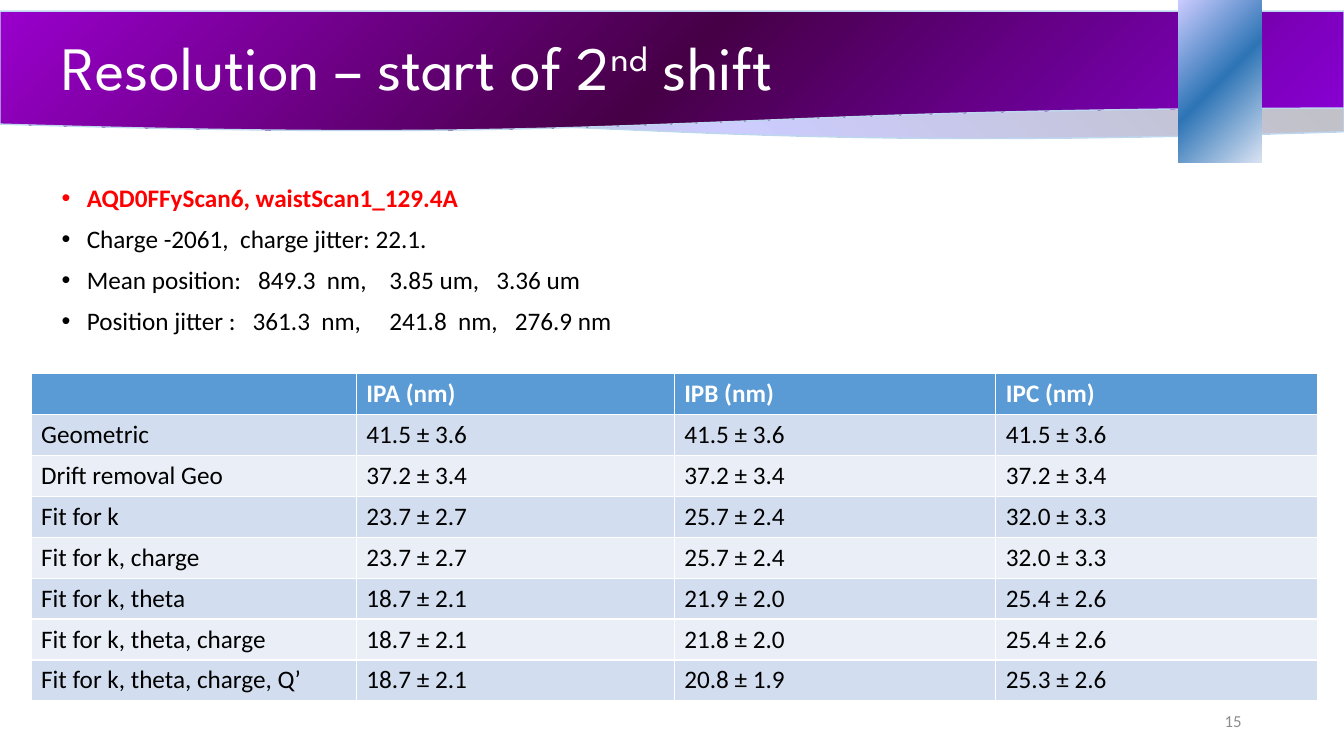
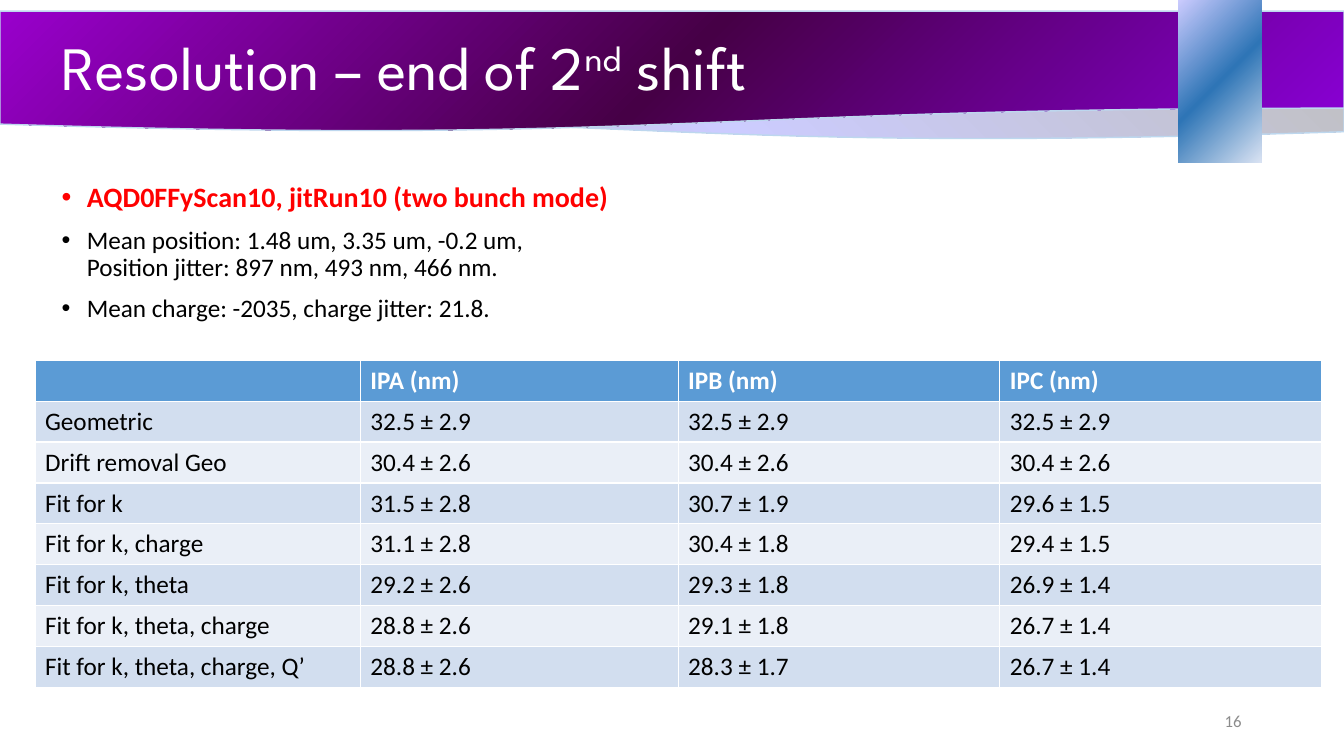
from lxml import etree
from pptx import Presentation
from pptx import util as u
from pptx.dml import color
from pptx.enum import shapes, text
from pptx.oxml import ns

WHITE = color.RGBColor(0xFF, 0xFF, 0xFF)
BLACK = color.RGBColor(0x00, 0x00, 0x00)
RED = color.RGBColor(0xFF, 0x00, 0x00)
GREY = color.RGBColor(0x8C, 0x8C, 0x8C)
PALE_BLUE = color.RGBColor(0xBD, 0xD7, 0xEE)
HEADER_BLUE = color.RGBColor(0x5B, 0x9B, 0xD5)
ROW_DARK = color.RGBColor(0xD2, 0xDE, 0xEF)
ROW_LIGHT = color.RGBColor(0xEA, 0xEF, 0xF7)
MID_GREY = color.RGBColor(0xA6, 0xA6, 0xA6)
LIGHT_GREY = color.RGBColor(0xBF, 0xBF, 0xBF)
LAVENDER = color.RGBColor(0xCC, 0xCC, 0xFF)
VIOLET = color.RGBColor(0x8A, 0x00, 0xD6)
PLUM = color.RGBColor(0x46, 0x00, 0x46)
MAGENTA = color.RGBColor(0x99, 0x00, 0xCC)
ICE = color.RGBColor(0xDA, 0xE3, 0xF3)
BLUE = color.RGBColor(0x2E, 0x75, 0xB6)

TITLE_FONT = {"name": "League Spartan", "size": u.Pt(44), "color": WHITE}
BODY_FONT = {"name": "Calibri", "size": u.Pt(18), "color": BLACK, "bold": False}
HEADER_FONT = {**BODY_FONT, "color": WHITE, "bold": True}
NUMBER_FONT = {"name": "Calibri", "size": u.Pt(12), "color": GREY}
BULLET_FORMAT = {"line_spacing": 0.9, "space_before": u.Pt(10)}

COLUMN_WIDTHS = (232.4, 227, 229.8, 229.8)
ROW_HEIGHT = 29.2
HEADERS = ("", "IPA (nm)", "IPB (nm)", "IPC (nm)")
METHODS = (
    "Geometric",
    "Drift removal Geo",
    "Fit for k",
    "Fit for k, charge",
    "Fit for k, theta",
    "Fit for k, theta, charge",
    "Fit for k, theta, charge, Q’",
)

SLIDES = (
    {
        "number": 15,
        "title": "Resolution – start of 2",
        "bullets": (
            "AQD0FFyScan6, waistScan1_129.4A",
            "Charge -2061,  charge jitter: 22.1.",
            "Mean position:   849.3  nm,    3.85 um,   3.36 um",
            "Position jitter :   361.3  nm,     241.8  nm,   276.9 nm",
        ),
        "lead_size": 18,
        "body_box": (36.8, 128.8, 828, 232),
        "columns": 1,
        "table_at": (22.2, 267),
        "values": (
            ("41.5 ± 3.6", "41.5 ± 3.6", "41.5 ± 3.6"),
            ("37.2 ± 3.4", "37.2 ± 3.4", "37.2 ± 3.4"),
            ("23.7 ± 2.7", "25.7 ± 2.4", "32.0 ± 3.3"),
            ("23.7 ± 2.7", "25.7 ± 2.4", "32.0 ± 3.3"),
            ("18.7 ± 2.1", "21.9 ± 2.0", "25.4 ± 2.6"),
            ("18.7 ± 2.1", "21.8 ± 2.0", "25.4 ± 2.6"),
            ("18.7 ± 2.1", "20.8 ± 1.9", "25.3 ± 2.6"),
        ),
    },
    {
        "number": 16,
        "title": "Resolution – end of 2",
        "bullets": (
            "AQD0FFyScan10, jitRun10 (two bunch mode)",
            "Mean position: 1.48 um, 3.35 um, -0.2 um,\vPosition jitter: 897 nm, 493 nm, 466 nm.",
            "Mean charge: -2035, charge jitter: 21.8.",
        ),
        "lead_size": 20,
        "body_box": (36.8, 127.4, 828, 342.8),
        "columns": 2,
        "table_at": (25, 257.4),
        "values": (
            ("32.5 ± 2.9", "32.5 ± 2.9", "32.5 ± 2.9"),
            ("30.4 ± 2.6", "30.4 ± 2.6", "30.4 ± 2.6"),
            ("31.5 ± 2.8", "30.7 ± 1.9", "29.6 ± 1.5"),
            ("31.1 ± 2.8", "30.4 ± 1.8", "29.4 ± 1.5"),
            ("29.2 ± 2.6", "29.3 ± 1.8", "26.9 ± 1.4"),
            ("28.8 ± 2.6", "29.1 ± 1.8", "26.7 ± 1.4"),
            ("28.8 ± 2.6", "28.3 ± 1.7", "26.7 ± 1.4"),
        ),
    },
)


def points(values):
    return [u.Pt(value) for value in values]


def format_object(target, values):
    for name, value in values.items():
        setattr(target, name, value)


def format_runs(paragraph, values):
    for run in paragraph.runs:
        for name, value in values.items():
            if name == "color":
                run.font.color.rgb = value
            else:
                setattr(run.font, name, value)


def place(shape, box):
    format_object(shape, dict(zip(("left", "top", "width", "height"), points(box))))


def add_child(parent, tag, **attributes):
    return etree.SubElement(parent, ns.qn(tag), attributes)


def set_gradient(shape, colors, circular):
    shape.fill.gradient()
    gradient = next(shape.element.iter(ns.qn("a:gradFill")))
    gradient.clear()
    gradient.set("rotWithShape", "1")
    stops = add_child(gradient, "a:gsLst")
    for position, stop_color in zip(("0", "50000", "100000"), colors):
        stop = add_child(stops, "a:gs", pos=position)
        add_child(stop, "a:srgbClr", val=str(stop_color))
    if circular:
        focus = add_child(gradient, "a:path", **{"path": "circle"})
        add_child(focus, "a:fillToRect", l="100000", t="100000")
    else:
        add_child(gradient, "a:lin", ang="13500000", scaled="0")


def add_band(slide, kind, box, colors, circular=False, flipped=False):
    band = slide.shapes.add_shape(kind, *points(box))
    band.shadow.inherit = False
    set_gradient(band, colors, circular)
    if circular:
        band.line.fill.background()
    else:
        band.line.color.rgb = PALE_BLUE
        band.line.width = u.Pt(1)
    if flipped:
        next(band.element.iter(ns.qn("a:xfrm"))).set("flipH", "1")
    return band


def build_layout(presentation, layout):
    place(layout.placeholders[0], (36.8, 8.6, 828, 83.5))
    slide = presentation.slides[0]
    wave, block = shapes.MSO_SHAPE.FLOWCHART_DOCUMENT, shapes.MSO_SHAPE.RECTANGLE
    bands = (
        add_band(slide, wave, (0, 9.4, 960, 90.7), (MID_GREY, LAVENDER, LIGHT_GREY), flipped=True),
        add_band(slide, wave, (0, 8, 960, 86.4), (VIOLET, PLUM, MAGENTA)),
        add_band(slide, block, (841.5, 0, 59.8, 116.2), (ICE, BLUE, LAVENDER), circular=True),
    )
    for position, band in enumerate(bands, start=2):
        layout.shapes.element.insert(position, band.element)


def fill_title(slide, title):
    frame = slide.shapes.title.text_frame
    format_object(frame, {
        "vertical_anchor": text.MSO_ANCHOR.MIDDLE,
        "auto_size": text.MSO_AUTO_SIZE.NONE,
    })
    paragraph = frame.paragraphs[0]
    format_object(paragraph, {"alignment": text.PP_ALIGN.LEFT, "line_spacing": 0.9})
    for part in (title, "nd", " shift"):
        paragraph.add_run().text = part
    format_runs(paragraph, TITLE_FONT)
    paragraph.runs[1]._r.get_or_add_rPr().set("baseline", "30000")


def fill_bullets(slide, content):
    body = slide.placeholders[1]
    place(body, content["body_box"])
    frame = body.text_frame
    frame.auto_size = text.MSO_AUTO_SIZE.NONE
    next(body.element.iter(ns.qn("a:bodyPr"))).set("numCol", str(content["columns"]))
    lead_font = {**BODY_FONT, "size": u.Pt(content["lead_size"]), "color": RED, "bold": True}
    for index, line in enumerate(content["bullets"]):
        paragraph = frame.add_paragraph() if index else frame.paragraphs[0]
        paragraph.text = line
        format_object(paragraph, BULLET_FORMAT)
        format_runs(paragraph, BODY_FONT if index else lead_font)
        properties = paragraph._p.get_or_add_pPr()
        for name, indent in (("marL", 18), ("indent", -18)):
            properties.set(name, str(u.Pt(indent)))
        for line_break in paragraph._p.findall(ns.qn("a:br")):
            add_child(line_break, "a:rPr", sz="1800")


def add_results(slide, position, values):
    rows = [HEADERS] + [(method, *row) for method, row in zip(METHODS, values)]
    size = (sum(COLUMN_WIDTHS), ROW_HEIGHT * len(rows))
    table = slide.shapes.add_table(len(rows), len(HEADERS), *points((*position, *size))).table
    for column, width in zip(table.columns, COLUMN_WIDTHS):
        column.width = u.Pt(width)
    for row_index, row in enumerate(rows):
        table.rows[row_index].height = u.Pt(ROW_HEIGHT)
        row_fill = ROW_DARK if row_index % 2 else ROW_LIGHT
        for column_index, value in enumerate(row):
            cell = table.cell(row_index, column_index)
            cell.fill.solid()
            cell.fill.fore_color.rgb = row_fill if row_index else HEADER_BLUE
            cell.text = value
            format_runs(cell.text_frame.paragraphs[0], BODY_FONT if row_index else HEADER_FONT)


def add_number(slide, number):
    frame = slide.shapes.add_textbox(*points((678, 500.5, 216, 28.8))).text_frame
    format_object(frame, {"word_wrap": True, "vertical_anchor": text.MSO_ANCHOR.MIDDLE})
    paragraph = frame.paragraphs[0]
    paragraph.text = str(number)
    paragraph.alignment = text.PP_ALIGN.RIGHT
    format_runs(paragraph, NUMBER_FONT)


def main():
    presentation = Presentation()
    format_object(presentation, {"slide_width": u.Pt(960), "slide_height": u.Pt(540)})
    layout = presentation.slide_layouts[1]
    for content in SLIDES:
        slide = presentation.slides.add_slide(layout)
        fill_title(slide, content["title"])
        fill_bullets(slide, content)
        add_number(slide, content["number"])
        add_results(slide, content["table_at"], content["values"])
    build_layout(presentation, layout)
    presentation.save("out.pptx")


if __name__ == "__main__":
    main()
